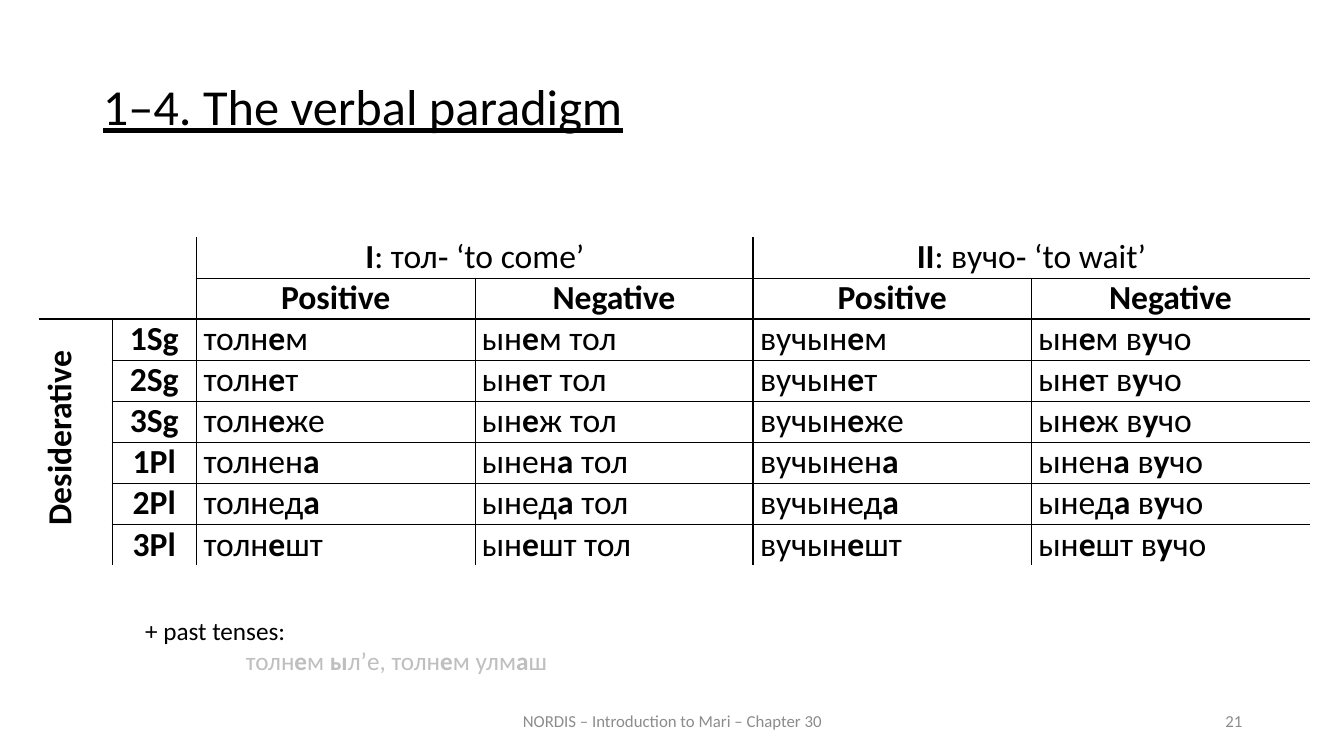
from pptx import Presentation
from pptx.dml.color import RGBColor as RGB
from pptx.enum.text import MSO_ANCHOR as Anchor, PP_ALIGN as Align
from pptx.util import Inches, Pt
from lxml.etree import SubElement as Sub

# Content: text between asterisks is bold
TITLE = "1–4. The verbal paradigm"
MOOD = "*Desiderative*"
VERBS = ["*I*: тол‑ ‘to come’", "*II*: вучо‑ ‘to wait’"]
POLES = ["*Positive*", "*Negative*"]
# Person, positive ending, negative ending
FORMS = [
    ("*1Sg*", "н*е*м", "н*е*м"),
    ("*2Sg*", "н*е*т", "н*е*т"),
    ("*3Sg*", "н*е*же", "н*е*ж"),
    ("*1Pl*", "нен*а*", "нен*а*"),
    ("*2Pl*", "нед*а*", "нед*а*"),
    ("*3Pl*", "н*е*шт", "н*е*шт"),
]
# Positive stem, negative stem
STEMS = [("тол", "тол"), ("вучы", "в*у*чо")]
PAST = ["+ past tenses:", "толн*е*м *ы*л’е, толн*е*м улм*а*ш"]
FOOT = "NORDIS – Introduction to Mari – Chapter 30"
PAGE = "21"


class Theme:
    font = "Calibri"
    ink, grey, pale = "000000", "8C8C8C", "BFBFBF"
    title, cell, note, foot = 36, 24, 18, 12
    thin, thick = 0.5, 1.5
    plain = "{2D5ABB26-0587-4C30-8999-92F81FD0307C}"


COLS = [0.72, 0.84] + [2.76] * 4
HEAD = 2
ROWS = HEAD + len(FORMS)


def put(thing, **vals):
    for name, val in vals.items():
        setattr(thing, name, val)


def write(par, text, size, color=Theme.ink, align=Align.LEFT, line=False):
    par.alignment = align
    for i, part in enumerate(text.split("*")):
        if part:
            run = par.add_run()
            run.text = part
            put(run.font, name=Theme.font, size=Pt(size),
                bold=i % 2 == 1, underline=line)
            run.font.color.rgb = RGB.from_string(color)


def box(slide, at, anchor=Anchor.TOP):
    frame = slide.shapes.add_textbox(*map(Inches, at)).text_frame
    put(frame, word_wrap=True, vertical_anchor=anchor)
    return frame


def level(row, col):
    """Width of the rule above a cell."""
    if row == HEAD:
        return Theme.thick
    first = 2 if row < HEAD else 1
    return Theme.thin if 0 < row < ROWS and col >= first else 0


def upright(row, col):
    """Width of the rule left of a cell."""
    if col in (2, 4):
        return Theme.thick
    first = HEAD if col == 1 else 1
    return Theme.thin if col in (1, 3, 5) and row >= first else 0


def border(cell, row, col):
    prop = cell._tc.get_or_add_tcPr()
    sides = {"lnL": upright(row, col), "lnR": upright(row, col + 1),
             "lnT": level(row, col), "lnB": level(row + 1, col)}
    space = "{http://schemas.openxmlformats.org/drawingml/2006/main}"
    for side, width in sides.items():
        if width:
            edge = Sub(prop, space + side, w=str(Pt(width)))
            fill = Sub(edge, space + "solidFill")
            Sub(fill, space + "srgbClr", val=Theme.ink)


def main():
    deck = Presentation()
    put(deck, slide_width=Inches(13.33), slide_height=Inches(7.5))
    slide = deck.slides.add_slide(deck.slide_layouts[5])

    # Title
    head = slide.shapes.title
    put(head, left=Inches(0.92), top=Inches(0.76),
        width=Inches(11.5), height=Inches(0.83))
    put(head.text_frame, vertical_anchor=Anchor.TOP, word_wrap=True)
    par = head.text_frame.paragraphs[0]
    put(par, line_spacing=0.9, space_before=Pt(0))
    write(par, TITLE, Theme.title, align=Align.JUSTIFY, line=True)

    # Table frame
    shape = slide.shapes.add_table(ROWS, len(COLS), Inches(0.39), Inches(2.35),
                                   Inches(sum(COLS)), Inches(3.2))
    table = shape.table
    put(table, first_row=False, horz_banding=False)
    table._tbl.tblPr.find("{*}tableStyleId").text = Theme.plain
    for col, width in zip(table.columns, COLS):
        col.width = Inches(width)
    for r in range(ROWS):
        for c in range(len(COLS)):
            cell = table.cell(r, c)
            put(cell, margin_left=Inches(0.07), margin_right=Inches(0.07),
                margin_top=0, margin_bottom=0)
            border(cell, r, c)
            cell.fill.background()

    # Table text
    def enter(row, col, text, align=Align.CENTER):
        par = table.cell(row, col).text_frame.paragraphs[0]
        write(par, text, Theme.cell, align=align)
        return par

    for v, verb in enumerate(VERBS):
        col = 2 + 2 * v
        table.cell(0, col).merge(table.cell(0, col + 1))
        enter(0, col, verb)
        for p, pole in enumerate(POLES):
            enter(1, col + p, pole)
    for r, (who, pos, neg) in enumerate(FORMS, HEAD):
        enter(r, 1, who)
        for v, (stem, base) in enumerate(STEMS):
            col = 2 + 2 * v
            enter(r, col, stem + pos, Align.JUSTIFY)
            enter(r, col + 1, f"ы{neg} {base}", Align.JUSTIFY)
    side = table.cell(HEAD, 0)
    side.merge(table.cell(ROWS - 1, 0))
    side._tc.get_or_add_tcPr().set("vert", "vert270")
    enter(HEAD, 0, MOOD)._p.get_or_add_pPr().set("marL", str(Inches(0.08)))

    # Past tenses
    note = box(slide, (1.34, 6.05, 6.79, 0.71))
    write(note.paragraphs[0], PAST[0], Theme.note)
    par = note.add_paragraph()
    write(par, PAST[1], Theme.note, Theme.pale)
    par._p.get_or_add_pPr().set("marL", str(Inches(1)))

    # Footer and page number
    for text, left, width, align in [(FOOT, 4.42, 4.5, Align.CENTER),
                                     (PAGE, 9.42, 3, Align.RIGHT)]:
        frame = box(slide, (left, 6.95, width, 0.4), Anchor.MIDDLE)
        write(frame.paragraphs[0], text, Theme.foot, Theme.grey, align)

    deck.save("out.pptx")


if __name__ == "__main__":
    main()
